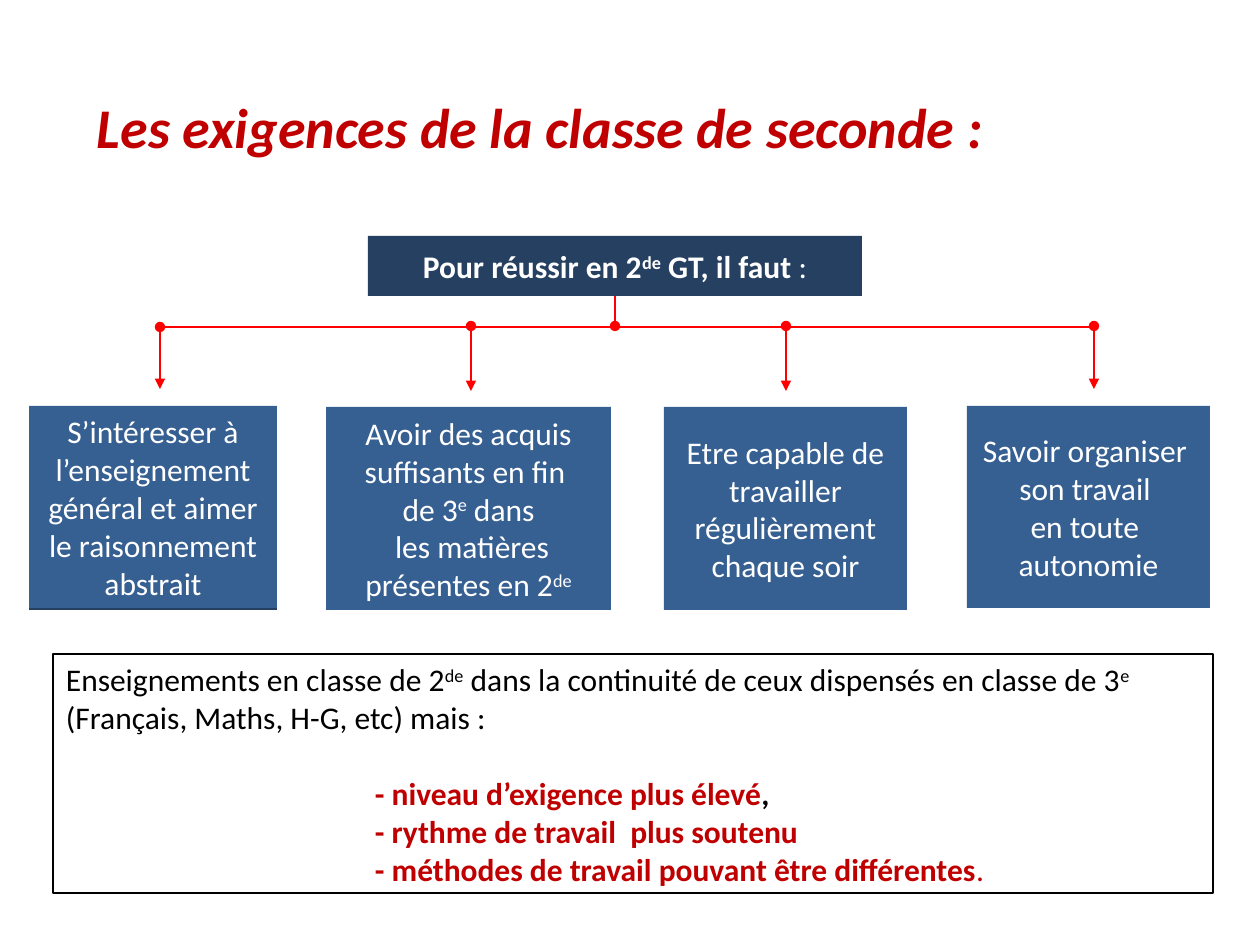
"""Builds the slide on what the seconde class demands of pupils."""
from lxml import etree
from pptx import Presentation
from pptx.dml.color import RGBColor
from pptx.enum.shapes import MSO_CONNECTOR, MSO_SHAPE
from pptx.enum.text import MSO_ANCHOR, PP_ALIGN
from pptx.oxml.ns import qn
from pptx.util import Pt

STRAIGHT = MSO_CONNECTOR.STRAIGHT
RECTANGLE = MSO_SHAPE.RECTANGLE
TOP, MIDDLE = MSO_ANCHOR.TOP, MSO_ANCHOR.MIDDLE
LEFT, CENTER = PP_ALIGN.LEFT, PP_ALIGN.CENTER

NAVY = RGBColor(0x25, 0x40, 0x61)
BLUE = RGBColor(0x37, 0x60, 0x92)
RED = RGBColor(0xFF, 0x00, 0x00)
CRIMSON = RGBColor(0xC0, 0x00, 0x00)
BLACK = RGBColor(0x00, 0x00, 0x00)
WHITE = RGBColor(0xFF, 0xFF, 0xFF)

PLAIN = {}
BOLD = {"bold": True}
TITLE = {"bold": True, "italic": True, "size": Pt(32)}
RAISED = {"raised": True}
BOLD_RAISED = {"bold": True, "raised": True}

RAIL_Y = 327
RAIL_SEGMENTS = [(160, 612), (616, 790), (786, 1094)]
CARDS = [
    ((29, 406, 248, 202), (160, 327, 389),
     [("S’intéresser à l’enseignement général et aimer le raisonnement abstrait", PLAIN)]),
    ((326, 407, 285, 203), (471, 326, 391),
     [("Avoir des acquis suffisants en fin \nde 3", PLAIN), ("e", RAISED),
      (" dans\n les matières présentes en 2", PLAIN), ("de", RAISED)]),
    ((664, 407, 243, 203), (786, 326, 391),
     [("Etre capable de travailler régulièrement chaque soir", PLAIN)]),
    ((967, 406, 243, 202), (1094, 326, 389),
     [("Savoir organiser \nson travail \nen toute \nautonomie", PLAIN)]),
]
CONTINUITY = [
    ("Enseignements en classe de 2", PLAIN), ("de", RAISED),
    (" dans la continuité de ceux dispensés en classe de 3", PLAIN), ("e ", RAISED),
    ("(Français, Maths, H-G, etc) mais :", PLAIN),
]
DEMANDS = [
    ("- niveau d’exigence plus élevé", ",", {"bold": True, "color": BLACK}),
    ("- rythme de travail  plus soutenu", "", PLAIN),
    ("- méthodes de travail pouvant être différentes", ".", PLAIN),
]


def px(length):
    """Turn pixels into EMU."""
    return round(length * 914400 / 126)


class SlideBuilder:
    """Holds the style and the current slide."""

    font = {"name": "Calibri", "size": Pt(18), "bold": False, "italic": False}
    frame = {"margin_left": px(13), "margin_right": px(13),
             "margin_top": px(6), "margin_bottom": px(6), "word_wrap": True}

    def __init__(self, deck):
        self.page = deck.slides.add_slide(deck.slide_layouts[5])

    def add_spans(self, para, spans, color, align=LEFT):
        para.alignment = align
        for text, style in spans:
            values = {**self.font, "color": color, "raised": False, **style}
            for index, line in enumerate(text.split("\n")):
                if index:
                    para.add_line_break()
                span = para.add_run()
                span.text = line
                for name in self.font:
                    setattr(span.font, name, values[name])
                span.font.color.rgb = values["color"]
                if values["raised"]:
                    span.font._element.set("baseline", "30000")

    def set_frame(self, box, anchor):
        for name, value in {**self.frame, "vertical_anchor": anchor}.items():
            setattr(box.text_frame, name, value)
        return box.text_frame.paragraphs[0]

    def title(self, place, text):
        box = self.page.shapes.title
        for name, value in zip(("left", "top", "width", "height"), place):
            setattr(box, name, px(value))
        self.add_spans(self.set_frame(box, TOP), [(text, TITLE)], CRIMSON)

    def box(self, place, fill=None, spans=()):
        box = self.page.shapes.add_shape(RECTANGLE, *map(px, place))
        box.shadow.inherit = False
        if fill is None:
            box.fill.background()
            box.line.color.rgb = BLACK
            box.line.width = Pt(0.75)
        else:
            box.fill.solid()
            box.fill.fore_color.rgb = fill
            box.line.fill.background()
        if spans:
            self.add_spans(self.set_frame(box, MIDDLE), spans, WHITE, CENTER)
        return box

    def line(self, start, end, **ends):
        line = self.page.shapes.add_connector(STRAIGHT, *map(px, start + end))
        line.line.color.rgb = RED
        line.line.width = Pt(1.25)
        for name, kind in ends.items():
            etree.SubElement(line.get_or_add_ln(), qn(f"a:{name}")).set("type", kind)
        etree.SubElement(line._element.spPr, qn("a:effectLst"))
        return line

    def requirements(self, place):
        box = self.box(place)
        self.add_spans(self.set_frame(box, TOP), CONTINUITY, BLACK)
        for index, (demand, mark, mark_style) in enumerate(DEMANDS):
            para = box.text_frame.add_paragraph()
            para._p.get_or_add_pPr().set("marL", str(px(309)))
            if index == 0:
                para.space_before = Pt(22)
            spans = [(demand, BOLD)] + ([(mark, mark_style)] if mark else [])
            self.add_spans(para, spans, CRIMSON)


def main():
    deck = Presentation()
    deck.slide_width, deck.slide_height = px(1260), px(945)
    builder = SlideBuilder(deck)
    builder.title((84, 86, 1091, 79), "Les exigences de la classe de seconde :")
    header = builder.box((368, 236, 494, 60), NAVY, [
        ("Pour réussir en 2", BOLD), ("de", BOLD_RAISED),
        (" GT, il faut ", BOLD), (":", PLAIN)])
    stem = builder.line((615, 296), (615, 326), tailEnd="oval")
    stem.begin_connect(header, 2)
    for start, end in RAIL_SEGMENTS:
        builder.line((start, RAIL_Y), (end, RAIL_Y))
    builder.box((29, 407, 248, 203), NAVY)
    for place, (x, top, bottom), spans in CARDS:
        builder.line((x, top), (x, bottom), headEnd="oval", tailEnd="triangle")
        builder.box(place, BLUE, spans)
    builder.requirements((53, 654, 1160, 239))
    deck.save("out.pptx")


if __name__ == "__main__":
    main()
